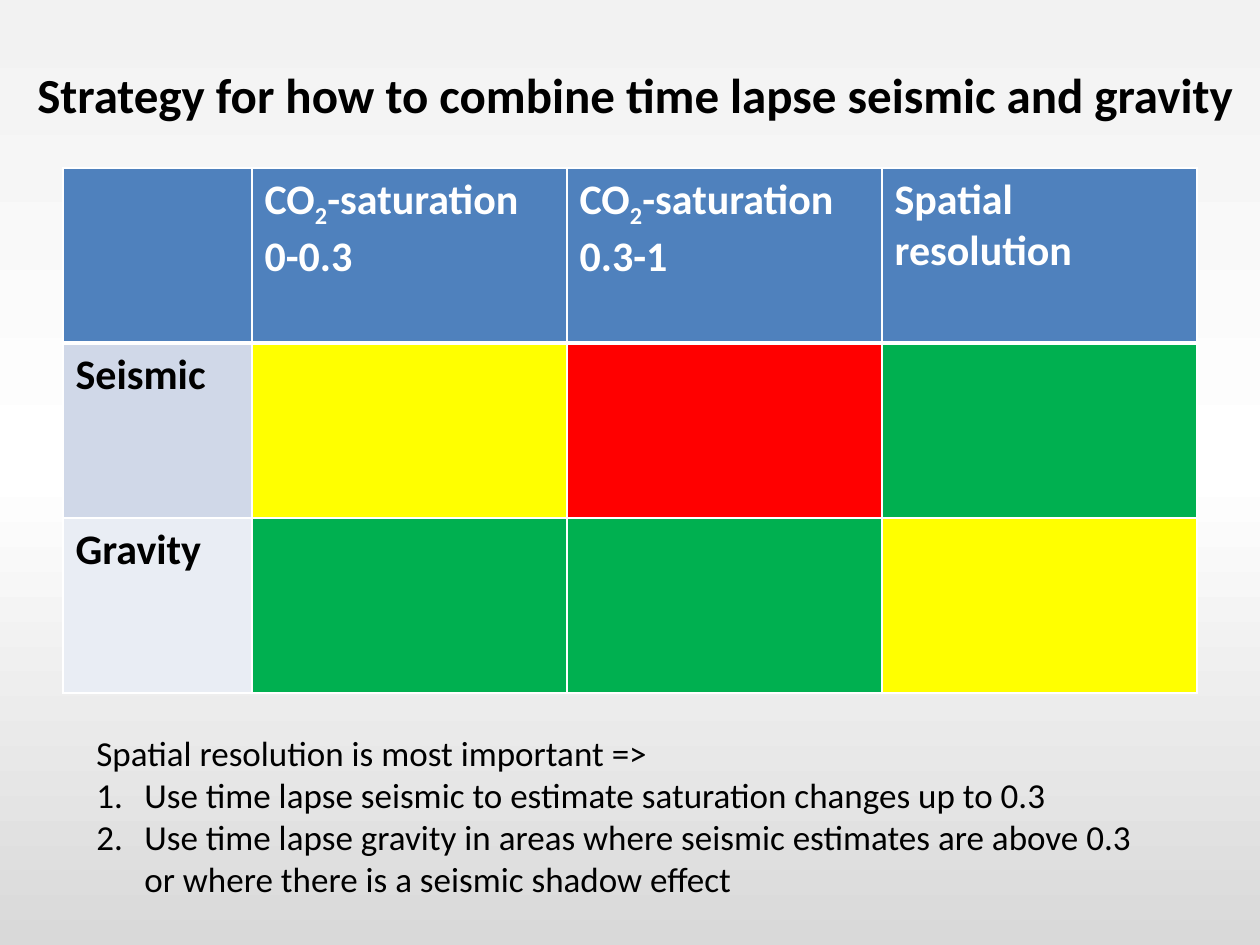
from lxml import etree
from pptx import Presentation
from pptx.dml.color import RGBColor
from pptx.enum.text import MSO_AUTO_SIZE as AutoSize
from pptx.oxml import parse_xml
from pptx.oxml.ns import nsdecls, qn
from pptx.util import Emu, Pt

PX = 914400 / 126
FONT = "Calibri"
BLACK = RGBColor(0x00, 0x00, 0x00)
WHITE = RGBColor(0xFF, 0xFF, 0xFF)
BLUE = RGBColor(0x4F, 0x81, 0xBD)
BAND_DARK = RGBColor(0xD0, 0xD8, 0xE8)
BAND_LIGHT = RGBColor(0xE9, 0xED, 0xF4)
YELLOW = RGBColor(0xFF, 0xFF, 0x00)
RED = RGBColor(0xFF, 0x00, 0x00)
GREEN = RGBColor(0x00, 0xB0, 0x50)
BACKDROP = [(0, RGBColor(0xF2, 0xF2, 0xF2)), (50, WHITE),
            (100, RGBColor(0xD9, 0xD9, 0xD9))]

# Each cell is its text runs and its fill; a run of "2" in the header is a subscript
HEADER = [[], ["CO", "2", "-saturation 0-0.3"],
          ["CO", "2", "-saturation 0.3-1"], ["Spatial resolution"]]
RATINGS = [("Seismic", BAND_DARK, [YELLOW, RED, GREEN]),
           ("Gravity", BAND_LIGHT, [GREEN, GREEN, YELLOW])]
CONCLUSION = "Spatial resolution is most important =>"
STEPS = ["Use time lapse seismic to estimate saturation changes up to 0.3",
         "Use time lapse gravity in areas where seismic estimates are above 0.3 "
         "or where there is a seismic shadow effect"]


def px(length):
    return Emu(round(length * PX))


def style(font, size, color, bold=False):
    font.name, font.size, font.bold = FONT, Pt(size), bold
    font.color.rgb = color


def paint_background(slide):
    stops = "".join(f'<a:gs pos="{pos * 1000}"><a:srgbClr val="{color}"/></a:gs>'
                    for pos, color in BACKDROP)
    fill = slide.background.fill
    fill.solid()
    bg_pr = slide._element.cSld.find(qn("p:bg")).find(qn("p:bgPr"))
    bg_pr.replace(bg_pr[0], parse_xml(
        f'<a:gradFill {nsdecls("a")} rotWithShape="1"><a:gsLst>{stops}</a:gsLst>'
        '<a:lin ang="5400000" scaled="0"/></a:gradFill>'))


def add_text_box(slide, box, wrap):
    frame = slide.shapes.add_textbox(*map(px, box)).text_frame
    frame.word_wrap = wrap
    frame.auto_size = AutoSize.SHAPE_TO_FIT_TEXT
    return frame


def add_title(slide, box):
    frame = add_text_box(slide, box, wrap=False)
    frame.text = "Strategy for how to combine time lapse seismic and gravity"
    style(frame.paragraphs[0].runs[0].font, 28, BLACK, bold=True)


def set_cell(cell, parts, fill, color, top=1, bottom=1):
    # Borders precede the fill in the cell properties
    properties = cell._tc.get_or_add_tcPr()
    for side, width in zip("LRTB", (1, 1, top, bottom)):
        properties.append(parse_xml(
            f'<a:ln{side} {nsdecls("a")} w="{Pt(width)}"><a:solidFill>'
            f'<a:srgbClr val="{WHITE}"/></a:solidFill></a:ln{side}>'))
    cell.fill.solid()
    cell.fill.fore_color.rgb = fill
    for part in parts:
        run = cell.text_frame.paragraphs[0].add_run()
        run.text = part
        style(run.font, 24, color, bold=True)
        if part == "2":
            run.font._element.set("baseline", "-25000")


def add_rating_table(slide, box):
    left, top, width, height = box
    rows, columns = len(RATINGS) + 1, len(HEADER)
    table = slide.shapes.add_table(rows, columns, *map(px, box)).table

    # The label column takes a sixth, the others share the rest
    label_width = width // 6
    for index, column in enumerate(table.columns):
        column.width = px((width - label_width) // (columns - 1) if index else label_width)
    for row in table.rows:
        row.height = px(height // rows)

    for column, parts in enumerate(HEADER):
        set_cell(table.cell(0, column), parts, BLUE, WHITE, bottom=3)
    for row, (method, band, colors) in enumerate(RATINGS, 1):
        top_line = 3 if row == 1 else 1
        set_cell(table.cell(row, 0), [method], band, BLACK, top=top_line)
        for column, color in enumerate(colors, 1):
            set_cell(table.cell(row, column), [], color, BLACK, top=top_line)


def add_conclusion(slide, box):
    frame = add_text_box(slide, box, wrap=True)
    frame.text = "\n".join([CONCLUSION, *STEPS])
    for paragraph in frame.paragraphs[1:]:
        properties = paragraph._p.get_or_add_pPr()
        properties.set("marL", str(px(48)))
        properties.set("indent", str(-px(48)))
        etree.SubElement(properties, qn("a:buFont")).set("typeface", "+mj-lt")
        etree.SubElement(properties, qn("a:buAutoNum")).set("type", "arabicPeriod")
    for paragraph in frame.paragraphs:
        style(paragraph.runs[0].font, 20, BLACK)


def main():
    deck = Presentation()
    deck.slide_width, deck.slide_height = px(1260), px(945)
    slide = deck.slides.add_slide(deck.slide_layouts[6])
    paint_background(slide)
    add_rating_table(slide, (63, 168, 1134, 525))
    add_title(slide, (25, 58, 1235, 72))
    add_conclusion(slide, (84, 725, 1061, 183))
    deck.save("out.pptx")


if __name__ == "__main__":
    main()
